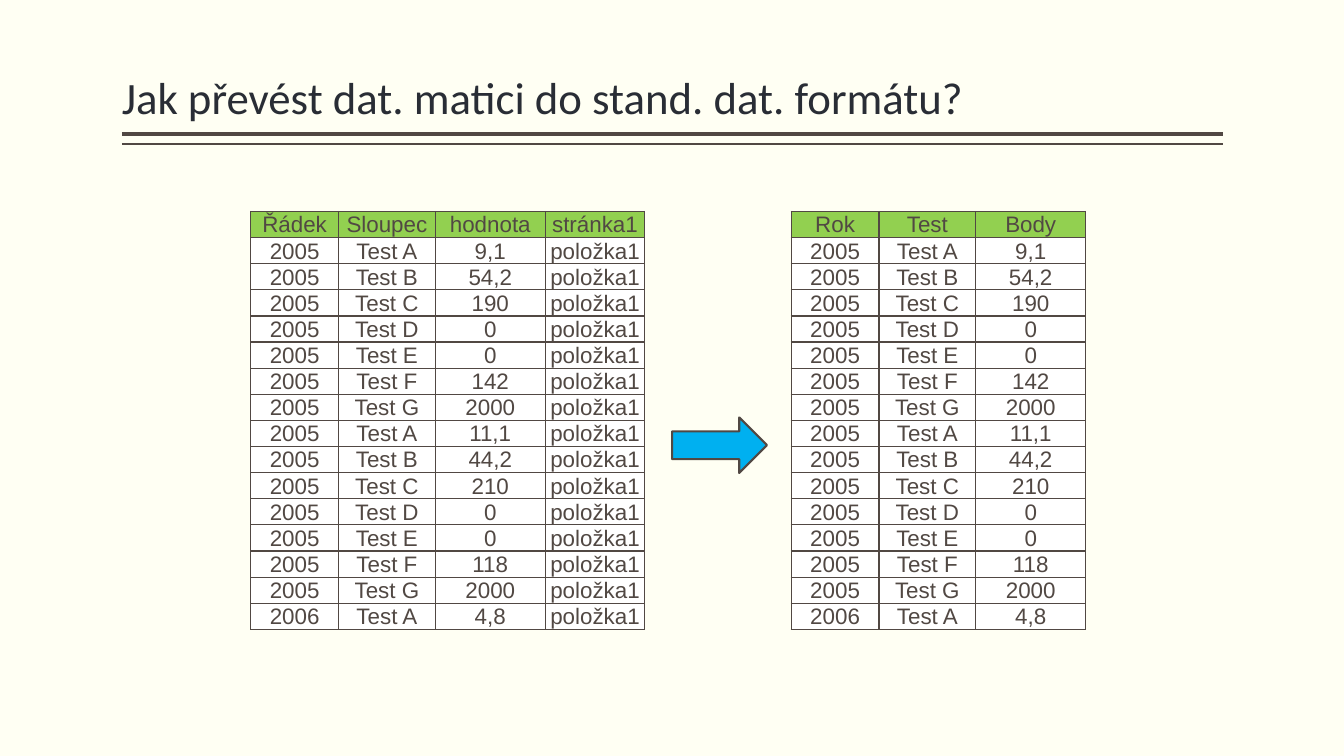
from dataclasses import dataclass
from itertools import cycle

from lxml.etree import SubElement
from pptx import Presentation
from pptx.dml.color import RGBColor
from pptx.enum.shapes import MSO_CONNECTOR, MSO_SHAPE
from pptx.enum.text import MSO_ANCHOR, MSO_AUTO_SIZE, PP_ALIGN
from pptx.oxml.ns import qn
from pptx.util import Cm, Pt


@dataclass(frozen=True)
class Theme:
    background: str = "FFFFF3"
    title: str = "292D35"
    ink: str = "514843"
    header: str = "92D050"
    body: str = "FFFFFF"
    arrow: str = "00B0F0"
    title_font: str = "Calibri"
    table_font: str = "Arial"
    title_size: int = 32
    table_size: int = 16


THEME = Theme()
TITLE_ONLY = 5

# Layout in centimetres
LEFT, WIDTH = 3.07, 27.74
TABLE_TOP, ROW_HEIGHT = 5.33, 0.65
COLUMN_WIDTHS = [2.21, 2.44, 2.77, 2.51]

# Table content
SCORES = ["9,1", "54,2", "190", "0", "0", "142", "2000",
          "11,1", "44,2", "210", "0", "0", "118", "2000", "4,8"]
YEARS = ["2005"] * 14 + ["2006"]
RECORDS = [(year, f"Test {letter}", score)
           for year, letter, score in zip(YEARS, cycle("ABCDEFG"), SCORES)]


def rgb(value):
    return RGBColor.from_string(value)


def write_text(frame, text, *, font, size, color, align, anchor, spacing=None):
    frame.word_wrap = True
    frame.vertical_anchor = anchor
    paragraph = frame.paragraphs[0]
    paragraph.alignment = align
    paragraph.line_spacing = spacing
    run = paragraph.add_run()
    run.text = text
    run.font.name = font
    run.font.size = Pt(size)
    run.font.color.rgb = rgb(color)


def add_title(slide, text):
    title = slide.shapes.title
    title.left, title.top = Cm(LEFT), Cm(0.2)
    title.width, title.height = Cm(WIDTH), Cm(3.05)
    frame = title.text_frame
    frame.auto_size = MSO_AUTO_SIZE.NONE
    frame.margin_left = frame.margin_right = 0
    frame.margin_top = frame.margin_bottom = Cm(0.13)
    write_text(frame, text, font=THEME.title_font, size=THEME.title_size,
               color=THEME.title, align=PP_ALIGN.LEFT,
               anchor=MSO_ANCHOR.BOTTOM, spacing=0.9)


def add_rule(slide, y, weight):
    rule = slide.shapes.add_connector(
        MSO_CONNECTOR.STRAIGHT, Cm(LEFT), Cm(y), Cm(LEFT + WIDTH), Cm(y))
    rule.line.color.rgb = rgb(THEME.ink)
    rule.line.width = Pt(weight)
    SubElement(rule._element.spPr, qn("a:effectLst"))


def add_cell_borders(cell):
    properties = cell._tc.get_or_add_tcPr()
    for position, side in enumerate(("lnL", "lnR", "lnT", "lnB")):
        border = SubElement(properties, qn(f"a:{side}"), w=str(Pt(1)))
        fill = SubElement(border, qn("a:solidFill"))
        SubElement(fill, qn("a:srgbClr"), val=THEME.ink)
        properties.insert(position, border)  # borders precede the fill


def format_cell(cell, text, fill):
    cell.fill.solid()
    cell.fill.fore_color.rgb = rgb(fill)
    cell.margin_left = cell.margin_right = cell.margin_top = Cm(0.03)
    cell.margin_bottom = 0
    cell.vertical_anchor = MSO_ANCHOR.BOTTOM
    write_text(cell.text_frame, text, font=THEME.table_font,
               size=THEME.table_size, color=THEME.ink,
               align=PP_ALIGN.CENTER, anchor=None)
    add_cell_borders(cell)


def add_data_table(slide, left, headers, records):
    rows = [headers, *records]
    widths = COLUMN_WIDTHS[:len(headers)]
    table = slide.shapes.add_table(
        len(rows), len(headers), Cm(left), Cm(TABLE_TOP),
        Cm(sum(widths)), Cm(ROW_HEIGHT * len(rows))).table
    table.horz_banding = False
    for column, width in zip(table.columns, widths):
        column.width = Cm(width)
    for row_index, values in enumerate(rows):
        table.rows[row_index].height = Cm(ROW_HEIGHT)
        fill = THEME.body if row_index else THEME.header
        for column_index, value in enumerate(values):
            format_cell(table.cell(row_index, column_index), value, fill)


def add_arrow(slide):
    arrow = slide.shapes.add_shape(
        MSO_SHAPE.RIGHT_ARROW, Cm(16.94), Cm(10.52), Cm(2.39), Cm(1.4))
    arrow.shadow.inherit = False
    arrow.fill.solid()
    arrow.fill.fore_color.rgb = rgb(THEME.arrow)
    arrow.line.color.rgb = rgb(THEME.ink)
    arrow.line.width = Pt(1.5)


def main():
    presentation = Presentation()
    presentation.slide_width, presentation.slide_height = Cm(33.87), Cm(19.05)
    slide = presentation.slides.add_slide(presentation.slide_layouts[TITLE_ONLY])
    slide.background.fill.solid()
    slide.background.fill.fore_color.rgb = rgb(THEME.background)

    # Heading with its double rule
    add_rule(slide, 3.38, 3)
    add_rule(slide, 3.63, 1)
    add_title(slide, "Jak převést dat. matici do stand. dat. formátu?")

    # Pivot output, then the standard format it becomes
    add_data_table(slide, 6.32, ("Řádek", "Sloupec", "hodnota", "stránka1"),
                   [(*record, "položka1") for record in RECORDS])
    add_data_table(slide, 19.94, ("Rok", "Test", "Body"), RECORDS)
    add_arrow(slide)

    presentation.save("out.pptx")


if __name__ == "__main__":
    main()
